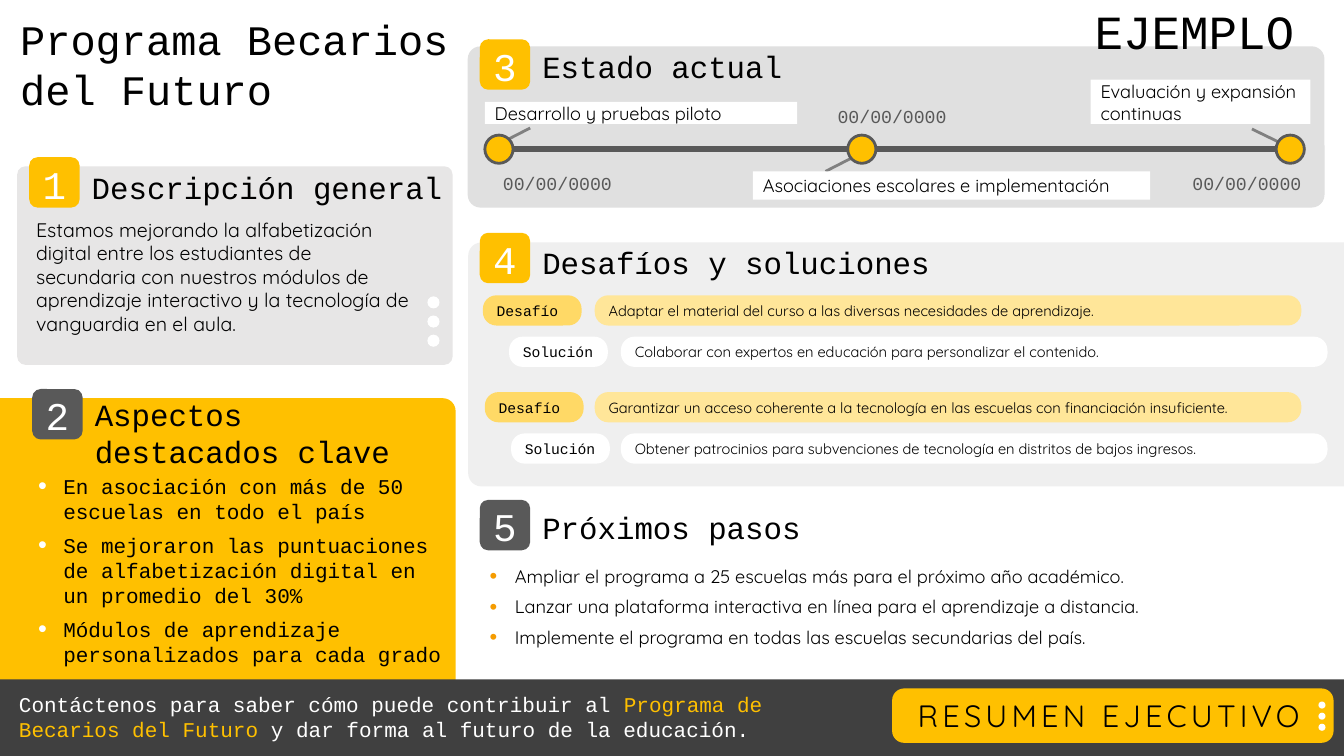
from lxml.etree import SubElement
from pptx import Presentation
from pptx.dml.color import RGBColor
from pptx.enum.shapes import MSO_CONNECTOR, MSO_SHAPE
from pptx.enum.text import MSO_ANCHOR, MSO_AUTO_SIZE, PP_ALIGN
from pptx.oxml.ns import qn
from pptx.util import Inches, Pt

# Grid: columns and rows of a tenth of an inch
CELL = Inches(0.1)
COLUMNS, ROWS = 133.33, 75
MONO, SANS = "Courier New", "Quicksand"
YELLOW, GRAY, WHITE, BLACK = "FFC000", "595959", "FFFFFF", "000000"
MIDDLE, GROW = MSO_ANCHOR.MIDDLE, MSO_AUTO_SIZE.SHAPE_TO_FIT_TEXT

presentation = Presentation()
presentation.slide_width = int(COLUMNS * CELL)
presentation.slide_height = ROWS * CELL
slide = presentation.slides.add_slide(presentation.slide_layouts[6])
color = RGBColor.from_string


def add_box(kind, left, top, width, height, fill=None, corner=None, outline=None):
    """Add a preset shape, or a text box when kind is None."""
    area = [int(cells * CELL) for cells in (left, top, width, height)]
    if kind is None:
        return slide.shapes.add_textbox(*area)
    shape = slide.shapes.add_shape(kind, *area)
    shape.shadow.inherit = False
    shape.fill.solid()
    shape.fill.fore_color.rgb = color(fill)
    if corner is not None:
        shape.adjustments[0] = corner
    if outline:
        shape.line.color.rgb = color(outline)
        shape.line.width = Pt(2)
    else:
        shape.line.fill.background()
    return shape


def write(shape, paragraphs, font, size, ink=BLACK, align=PP_ALIGN.LEFT,
          margins=(1, 0.5, 1, 0.5), anchor=MSO_ANCHOR.TOP, fit=MSO_AUTO_SIZE.NONE,
          spacing=0, bullet=None):
    """Fill a shape with paragraphs; each is a text or a list of (text, colour)."""
    frame = shape.text_frame
    frame_format = {"word_wrap": True, "auto_size": fit, "vertical_anchor": anchor}
    for side, margin in zip(("left", "top", "right", "bottom"), margins):
        frame_format["margin_" + side] = int(margin * CELL)
    for name, value in frame_format.items():
        setattr(frame, name, value)
    for index, content in enumerate(paragraphs):
        paragraph = frame.add_paragraph() if index else frame.paragraphs[0]
        paragraph.alignment = align
        if bullet:
            paragraph.space_after = Pt(6)
            properties = paragraph._p.get_or_add_pPr()
            properties.set("marL", str(Inches(0.25)))
            properties.set("indent", str(-Inches(0.25)))
            SubElement(SubElement(properties, qn("a:buClr")), qn("a:srgbClr"), val=bullet)
            SubElement(properties, qn("a:buSzPct"), val="120000")
            SubElement(properties, qn("a:buFont"), typeface="Arial")
            SubElement(properties, qn("a:buChar"), char="•")
        for text, run_ink in [(content, ink)] if isinstance(content, str) else content:
            run = paragraph.add_run()
            run.text = text
            for name, value in {"name": font, "size": Pt(size)}.items():
                setattr(run.font, name, value)
            run.font.color.rgb = color(run_ink)
            if spacing:
                run._r.get_or_add_rPr().set("spc", str(spacing * 100))


# Background panels
challenge_panel = add_box(MSO_SHAPE.ROUND_2_SAME_RECTANGLE, 77.8, -7.3, 24.2, 86.9,
                          "EFEFEF", 0.054)
challenge_panel.rotation = 270
add_box(MSO_SHAPE.ROUNDED_RECTANGLE, 46.4, 4.6, 85, 16, "E0E0E0", 0.079)
add_box(MSO_SHAPE.ROUND_1_RECTANGLE, 0, 39.5, 45.2, 35.5, YELLOW, 0.036)
add_box(MSO_SHAPE.ROUNDED_RECTANGLE, 1.7, 16.5, 43.2, 19.7, "E7E6E6", 0.042)
add_box(MSO_SHAPE.RECTANGLE, 0, 67.4, COLUMNS, 7.6, "404040")

# Titles
for text, area, size in (
    ("Programa Becarios del Futuro", (2, 1.3, 48.5, 12.6), 30),
    ("EJEMPLO", (108.6, 0.2, 22.7, 5.5), 34),
):
    write(add_box(None, *area), [text], MONO, size, margins=(0, 0, 0, 0))

# Numbered section headings
sections = (
    ("Descripción general", 2.9, 15.6, 16.8, 35.8, YELLOW),
    ("Aspectos destacados clave", 3.2, 38.6, 41.1, 32.1, GRAY),
    ("Estado actual", 47.6, 3.9, 4.8, 41.1, YELLOW),
    ("Desafíos y soluciones", 47.6, 23.1, 24.2, 57.3, YELLOW),
    ("Próximos pasos", 47.6, 49.6, 50.5, 32.1, GRAY),
)
for number, (heading, left, badge_top, top, width, fill) in enumerate(sections, 1):
    badge = add_box(MSO_SHAPE.ROUNDED_RECTANGLE, left, badge_top, 5, 5, fill)
    write(badge, [str(number)], MONO, 28, WHITE, PP_ALIGN.CENTER, (0, 0.2, 0, 0),
          MIDDLE, spacing=-3)
    write(add_box(None, left + 6.2, top, width, 3.6), [heading], MONO, 22,
          margins=(0, 0, 0, 0), anchor=MIDDLE)

# Section 1: description
write(add_box(None, 2.6, 21.1, 39.4, 12.8), [
    "Estamos mejorando la alfabetización digital entre los estudiantes de secundaria "
    "con nuestros módulos de aprendizaje interactivo y la tecnología de vanguardia "
    "en el aula."], SANS, 14, fit=GROW)

# Sections 2 and 5: bullet lists
write(add_box(None, 2.8, 46.5, 42.3, 20.4), [
    "En asociación con más de 50 escuelas en todo el país",
    "Se mejoraron las puntuaciones de alfabetización digital en un promedio del 30%",
    "Módulos de aprendizaje personalizados para cada grado",
], MONO, 15, fit=GROW, bullet=WHITE)
write(add_box(None, 47.6, 55.6, 84.5, 9.3), [
    "Ampliar el programa a 25 escuelas más para el próximo año académico.",
    "Lanzar una plataforma interactiva en línea para el aprendizaje a distancia.",
    "Implemente el programa en todas las escuelas secundarias del país.",
], SANS, 13, fit=GROW, bullet="F59C00")

# Section 3: timeline axis and pointers
for start_x, start_y, end_x, end_y, ink, width in (
    (128.1, 14.7, 124.2, 12.8, "808080", 2),
    (81.9, 17, 85.8, 15, "808080", 2),
    (48.7, 14.7, 52.6, 12.7, "808080", 2),
    (49.4, 14.8, 129, 14.8, GRAY, 4),
):
    ends = [int(cells * CELL) for cells in (start_x, start_y, end_x, end_y)]
    line = slide.shapes.add_connector(MSO_CONNECTOR.STRAIGHT, *ends)
    line.line.color.rgb = color(ink)
    line.line.width = Pt(width)
    SubElement(line._element.spPr, qn("a:effectLst"))

# Timeline milestones: dot, date and label
for dot_left, date_left, date_top, label, label_area in (
    (48.1, 47.6, 16.6, "Desarrollo y pruebas piloto", (48.1, 10.1, 31, 2.2)),
    (84.1, 80.8, 10, "Asociaciones escolares e implementación", (74.7, 17, 39.4, 2.8)),
    (126.6, 116, 16.6, "Evaluación y expansión continuas", (108.2, 7.9, 21.8, 4.4)),
):
    add_box(MSO_SHAPE.OVAL, dot_left, 13.4, 2.8, 2.8, YELLOW, outline=GRAY)
    write(add_box(None, date_left, date_top, 15.4, 3.2), ["00/00/0000"], MONO, 13,
          GRAY, PP_ALIGN.CENTER, fit=GROW)
    write(add_box(MSO_SHAPE.RECTANGLE, *label_area, WHITE), [label], SANS, 13,
          margins=(1, 0, 1, 0), anchor=MIDDLE, fit=GROW)

# Section 4: challenge and solution pairs
pairs = (
    (47.9, "Adaptar el material del curso a las diversas necesidades de aprendizaje.",
     "Colaborar con expertos en educación para personalizar el contenido."),
    (48.1, "Garantizar un acceso coherente a la tecnología en las escuelas con "
     "financiación insuficiente.",
     "Obtener patrocinios para subvenciones de tecnología en distritos de bajos ingresos."),
)
for pair, (tag_left, challenge, solution) in enumerate(pairs):
    for step, (tag, text, tag_fill, text_fill) in enumerate((
        ("Desafío", challenge, "FFD966", "FFE699"),
        ("Solución", solution, WHITE, WHITE),
    )):
        top = 29.3 + 9.6 * pair + 4.1 * step
        for content, font, left, width, fill in (
            (tag, MONO, tag_left, 9.8, tag_fill),
            (text, SANS, 59, 70.1, text_fill),
        ):
            pill = add_box(MSO_SHAPE.ROUNDED_RECTANGLE, left + 2.6 * step, top,
                           width, 3, fill, 0.448)
            write(pill, [content], font, 10.5, margins=(1, 0, 0, 0), anchor=MIDDLE)

# Footer
write(add_box(None, 0.9, 68.1, 86, 6.1), [[
    ("Contáctenos para saber cómo puede contribuir al ", WHITE),
    ("Programa de Becarios del Futuro", YELLOW),
    (" y dar forma al futuro de la educación.", WHITE),
]], MONO, 15, fit=GROW)
summary = add_box(MSO_SHAPE.ROUNDED_RECTANGLE, 88.5, 68.3, 43.8, 5.4, YELLOW, 0.221)
write(summary, ["RESUMEN EJECUTIVO"], SANS, 22, align=PP_ALIGN.CENTER,
      margins=(0, 0, 0.8, 0), anchor=MIDDLE, spacing=3)

# Columns of three dots
for left, top, size, pitch in ((42.4, 29.4, 1.2, 1.9), (130.8, 69.6, 0.7, 1.1)):
    for index in range(3):
        add_box(MSO_SHAPE.OVAL, left, top + index * pitch, size, size, WHITE)

presentation.save("out.pptx")
